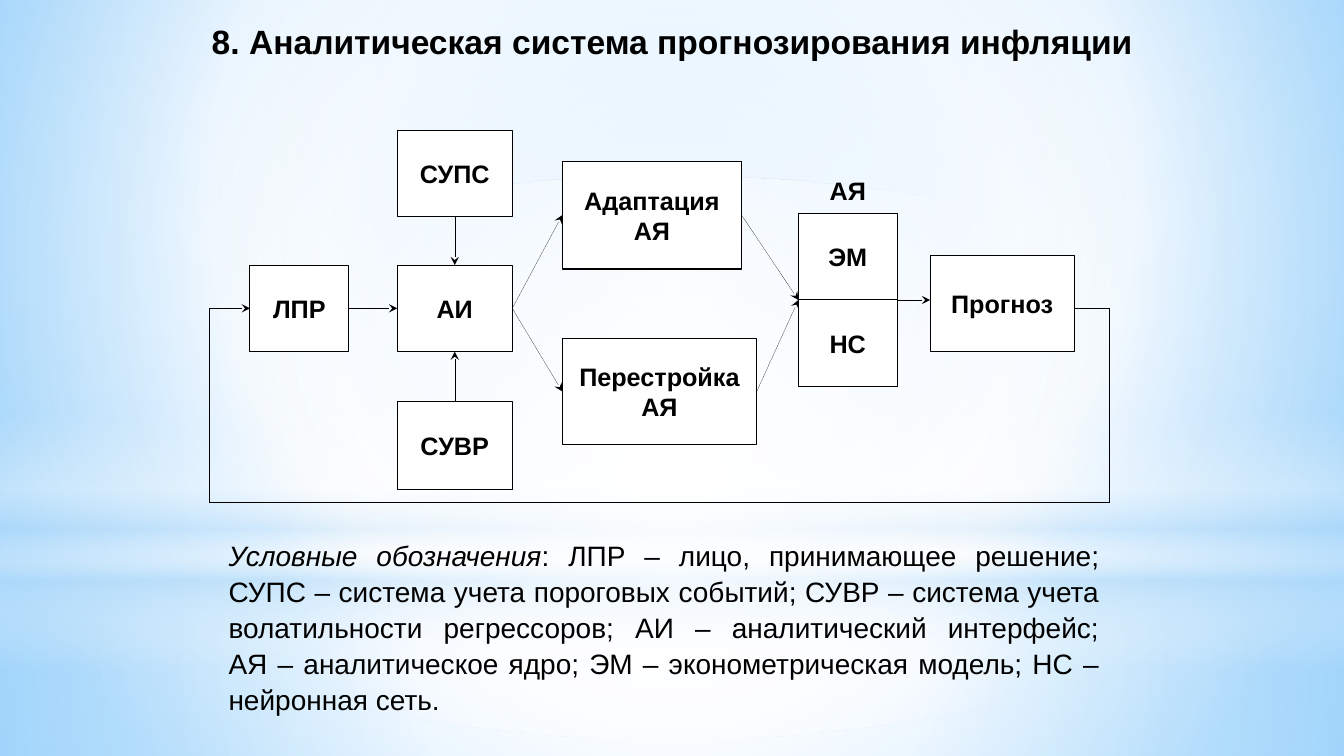
from typing import NamedTuple, Optional, Union

from lxml import etree
from pptx import Presentation
from pptx.dml.color import RGBColor
from pptx.enum.shapes import MSO_CONNECTOR as Connector, MSO_SHAPE as Shape
from pptx.enum.text import MSO_ANCHOR as Anchor, MSO_AUTO_SIZE as AutoSize, PP_ALIGN as Align
from pptx.oxml.ns import qn
from pptx.util import Cm, Pt

COLOURS = {"ink": "000000", "white": "FFFFFF", "haze": "B4DCFA",
           "sky": "9ED5FF", "azure": "5BB9FF"}
FONT = "Arial"
WIDTH, HEIGHT = 33.87, 19.05
TOP, BOTTOM, LEFT, RIGHT = 0, 2, 1, 3


class Stop(NamedTuple):
    place: int
    colour: str
    opacity: int = 100


class Gradient(NamedTuple):
    stops: list[Stop]
    focus: Optional[tuple[int, int, int, int]] = (50, 50, 50, 50)  # None: vertical


class Layer(NamedTuple):
    kind: Shape
    top: float
    height: float
    gradient: Gradient


class Block(NamedTuple):
    label: str
    left: float
    top: float
    width: float
    height: float = 2.18


class Side(NamedTuple):
    label: str
    site: int


class Point(NamedTuple):
    x: float
    y: float


class Link(NamedTuple):
    start: Union[Side, Point]
    end: Union[Side, Point]
    weight: float
    arrow: bool = True


BACKGROUND = Gradient([Stop(0, "sky"), Stop(60, "white"), Stop(100, "azure")], (20, 10, 20, 60))
LAYERS = [
    Layer(Shape.RECTANGLE, 14.17, 4.88, Gradient(
        [Stop(0, "white", 91), Stop(37, "white", 76), Stop(100, "haze", 79)])),
    Layer(Shape.RECTANGLE, 0, 14.17, Gradient(
        [Stop(0, "white", 89), Stop(48, "white", 62), Stop(100, "haze", 79)])),
    Layer(Shape.RECTANGLE, 10.46, 6.35, Gradient(
        [Stop(0, "white", 0), Stop(29, "white", 30), Stop(45, "haze", 40),
         Stop(55, "white", 26), Stop(65, "haze", 60), Stop(100, "white", 0)], None)),
    Layer(Shape.OVAL, 4.45, 14.17, Gradient([Stop(0, "white"), Stop(56, "white", 0)])),
]

BLOCKS = [
    Block("ЛПР", 6.3, 6.68, 2.49),
    Block("АИ", 10.01, 6.68, 2.9),
    Block("СУПС", 10.01, 3.28, 2.9),
    Block("СУВР", 10.01, 10.13, 2.9, 2.21),
    Block("Адаптация АЯ", 14.17, 4.06, 4.52, 2.72),
    Block("Перестройка АЯ", 14.17, 8.53, 4.9, 2.67),
    Block("ЭМ", 20.12, 5.38, 2.49),
    Block("НС", 20.12, 7.56, 2.49),
    Block("Прогноз", 23.44, 6.45, 3.63, 2.41),
]

CORE_IN, CORE_OUT = Point(20.12, 7.56), Point(22.61, 7.56)
LOOP = [Point(27.07, 7.77), Point(27.97, 7.77), Point(27.97, 12.67),
        Point(5.28, 12.67), Point(5.28, 7.77)]
LINKS = [
    Link(Side("ЛПР", RIGHT), Side("АИ", LEFT), 0.25),
    Link(Side("СУПС", BOTTOM), Side("АИ", TOP), 0.25),
    Link(Side("СУВР", TOP), Side("АИ", BOTTOM), 0.25),
    Link(Side("АИ", RIGHT), Side("Адаптация АЯ", LEFT), 0.1),
    Link(Side("АИ", RIGHT), Side("Перестройка АЯ", LEFT), 0.1),
    Link(Side("Адаптация АЯ", RIGHT), CORE_IN, 0.1),
    Link(Side("Перестройка АЯ", RIGHT), CORE_IN, 0.1),
    Link(CORE_OUT, Point(23.44, 7.56), 0.15),
    *(Link(start, end, weight, False)
      for start, end, weight in zip(LOOP, LOOP[1:], (0.5, 0.75, 0.75, 0.75))),
    Link(LOOP[-1], Side("ЛПР", LEFT), 0.25),
]

LEGEND_HEAD = "Условные обозначения"
LEGEND_BODY = (": ЛПР – лицо, принимающее решение; СУПС – система учета пороговых событий; "
               "СУВР – система учета волатильности регрессоров; АИ – аналитический интерфейс;\v"
               "АЯ – аналитическое ядро; ЭМ – эконометрическая модель; НС – нейронная сеть.")


def colour(name: str) -> RGBColor:
    return RGBColor.from_string(COLOURS[name])


def gradient_fill(gradient: Gradient):
    fill = etree.Element(qn("a:gradFill"), rotWithShape="1")
    stops = etree.SubElement(fill, qn("a:gsLst"))
    for stop in gradient.stops:
        mark = etree.SubElement(stops, qn("a:gs"), pos=str(stop.place * 1000))
        tint = etree.SubElement(mark, qn("a:srgbClr"), val=COLOURS[stop.colour])
        if stop.opacity < 100:
            etree.SubElement(tint, qn("a:alpha"), val=str(stop.opacity * 1000))
    if gradient.focus is None:
        etree.SubElement(fill, qn("a:lin"), ang="5400000", scaled="0")
    else:
        circle = etree.SubElement(fill, qn("a:path"), path="circle")
        edges = {edge: str(share * 1000) for edge, share in zip("ltrb", gradient.focus)}
        etree.SubElement(circle, qn("a:fillToRect"), **edges)
    return fill


def format_text(para, size: float, bold: bool = True, align=Align.CENTER, spacing: float = 1.0) -> None:
    para.alignment = align
    para.line_spacing = spacing
    for span in para.runs:
        span.font.name, span.font.size, span.font.bold = FONT, Pt(size), bold
        span.font.color.rgb = colour("ink")


def add_layer(page, layer: Layer) -> None:
    shape = page.shapes.add_shape(layer.kind, 0, Cm(layer.top), Cm(WIDTH), Cm(layer.height))
    shape.shadow.inherit = False
    shape.line.fill.background()
    shape.fill.background()
    properties = shape._element.spPr
    properties.replace(properties.find(qn("a:noFill")), gradient_fill(layer.gradient))


def add_block(page, block: Block):
    box = page.shapes.add_shape(Shape.RECTANGLE, Cm(block.left), Cm(block.top),
                                Cm(block.width), Cm(block.height))
    box.shadow.inherit = False
    box.fill.solid()
    box.fill.fore_color.rgb = colour("white")
    box.line.color.rgb = colour("ink")
    box.line.width = Pt(0.75)
    box.text_frame.text = block.label
    box.text_frame.vertical_anchor = Anchor.MIDDLE
    format_text(box.text_frame.paragraphs[0], 18)
    return box


def add_link(page, link: Link, boxes: dict) -> None:
    ends = [Cm(value) for end in (link.start, link.end)
            for value in (end if isinstance(end, Point) else (0, 0))]
    line = page.shapes.add_connector(Connector.STRAIGHT, *ends)
    for end, join in ((link.start, line.begin_connect), (link.end, line.end_connect)):
        if isinstance(end, Side):
            join(boxes[end.label], end.site)
    line.line.color.rgb = colour("ink")
    line.line.width = Pt(link.weight)
    if link.arrow:
        etree.SubElement(line.line._get_or_add_ln(), qn("a:tailEnd"), type="stealth")
    etree.SubElement(line._element.spPr, qn("a:effectLst"))


def add_text(page, left: float, top: float, width: float, height: float):
    box = page.shapes.add_textbox(Cm(left), Cm(top), Cm(width), Cm(height))
    box.text_frame.word_wrap = True
    return box.text_frame.paragraphs[0]


def main() -> None:
    deck = Presentation()
    deck.slide_width, deck.slide_height = Cm(WIDTH), Cm(HEIGHT)
    page = deck.slides.add_slide(deck.slide_layouts[5])

    # Backdrop
    page.background.fill.solid()
    backdrop = page._element.find(".//" + qn("p:bgPr"))
    backdrop.replace(backdrop[0], gradient_fill(BACKGROUND))
    for layer in LAYERS:
        add_layer(page, layer)

    # Title, brought in front of the backdrop
    title = page.shapes.title
    title.left, title.top, title.width, title.height = Cm(0.66), Cm(0.1), Cm(32.56), Cm(2.01)
    title.text_frame.text = "8. Аналитическая система прогнозирования инфляции"
    title.text_frame.auto_size = AutoSize.NONE
    title.text_frame.vertical_anchor = Anchor.MIDDLE
    format_text(title.text_frame.paragraphs[0], 24, spacing=0.9)
    page.shapes._spTree.append(title._element)

    # Legend
    legend = add_text(page, 5.51, 13.39, 22.45, 4.7)
    legend.text = LEGEND_HEAD + LEGEND_BODY
    legend.text = LEGEND_HEAD
    legend.runs[0].font.italic = True
    for index, part in enumerate(LEGEND_BODY.split("\v")):
        if index:
            legend.add_line_break()
        legend.add_run().text = part
    format_text(legend, 20, False, Align.JUSTIFY, 1.07)

    # Diagram
    boxes = {block.label: add_block(page, block) for block in BLOCKS}
    core = add_text(page, 20.12, 4.24, 2.49, 1.4)
    core.text = "АЯ"
    format_text(core, 18, spacing=1.07)
    for link in LINKS:
        add_link(page, link, boxes)

    deck.save("out.pptx")


if __name__ == "__main__":
    main()
